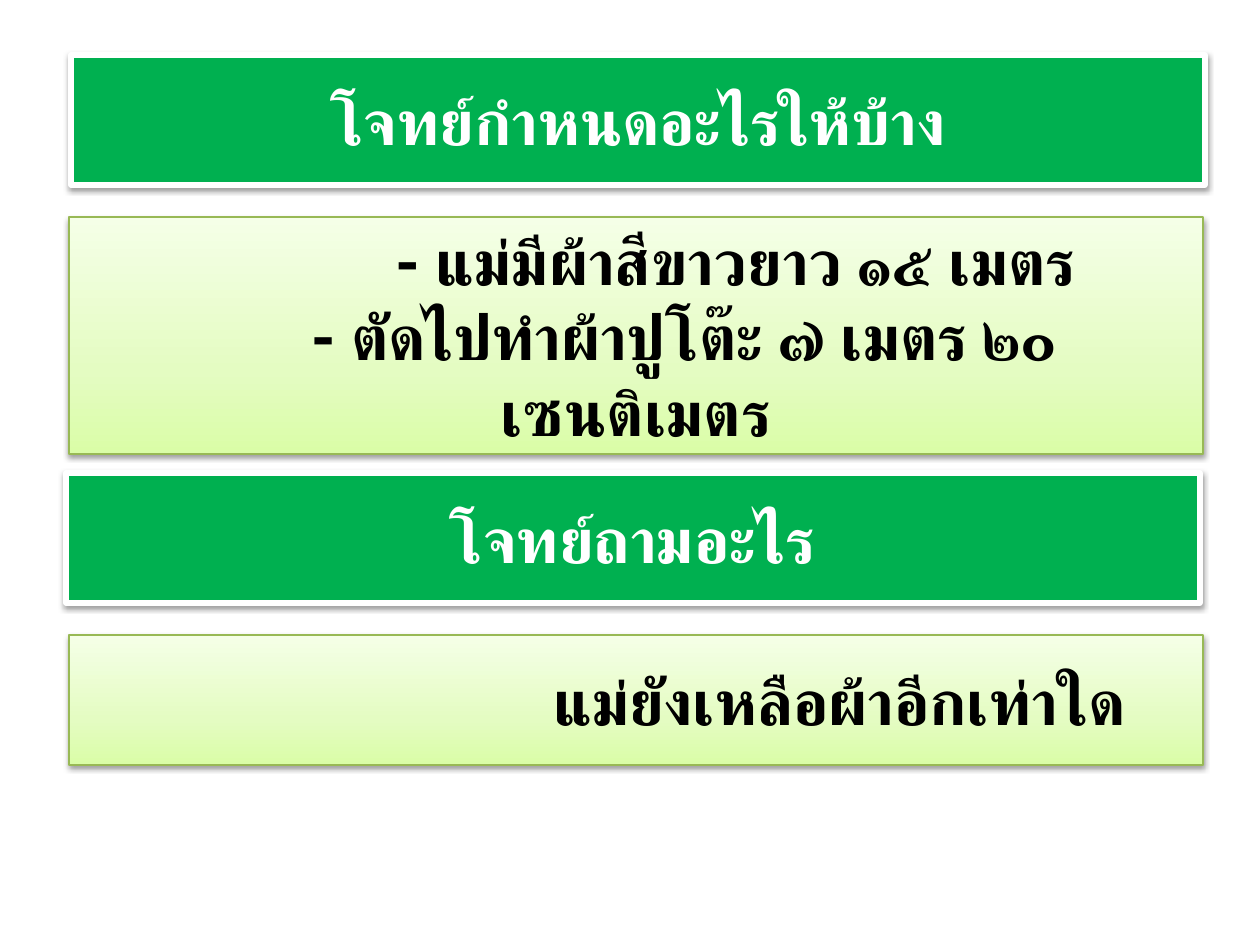
from copy import deepcopy
from dataclasses import dataclass

from lxml.etree import SubElement
from pptx import Presentation
from pptx.dml.color import RGBColor
from pptx.enum.shapes import MSO_SHAPE
from pptx.enum.text import MSO_ANCHOR, PP_ALIGN
from pptx.oxml.ns import qn
from pptx.util import Pt

PX = 914400 // 126
WIDE = 1134
GREEN = RGBColor(0x00, 0xB0, 0x50)
OLIVE = RGBColor(0x98, 0xB9, 0x55)
WHITE = RGBColor(0xFF, 0xFF, 0xFF)
BLACK = RGBColor(0x00, 0x00, 0x00)
FADE = (
    (0, RGBColor(0xDA, 0xFD, 0xA7)),
    (0.35, RGBColor(0xE4, 0xFC, 0xC2)),
    (1, RGBColor(0xF5, 0xFF, 0xE7)),
)
FONT = {"name": "Roboto", "size": Pt(36), "bold": True}


@dataclass(frozen=True)
class Line:
    text: str
    align: PP_ALIGN = PP_ALIGN.CENTER
    margin: int = 0
    first: int = 0


@dataclass(frozen=True)
class Panel:
    left: int
    top: int
    high: int
    head: bool
    lines: tuple[Line, ...]


PANELS = (
    Panel(71, 55, 130, True, (Line("โจทย์กำหนดอะไรให้บ้าง"),)),
    Panel(69, 217, 237, False, (
        Line("- แม่มีผ้าสีขาวยาว ๑๕ เมตร", PP_ALIGN.LEFT, margin=314),
        Line("- ตัดไปทำผ้าปูโต๊ะ ๗ เมตร ๒๐ เซนติเมตร", first=95),
    )),
    Panel(66, 473, 130, True, (Line("โจทย์ถามอะไร"),)),
    Panel(69, 635, 130, False, (
        Line("แม่ยังเหลือผ้าอีกเท่าใด", PP_ALIGN.LEFT, margin=472),
    )),
)


def fade(shape) -> None:
    """Fill the shape with the three-stop gradient, running upward."""
    fill = shape.fill
    fill.gradient()
    fill.gradient_angle = 90
    stops = shape._element.spPr.find(qn("a:gradFill")).find(qn("a:gsLst"))
    stops.insert(1, deepcopy(stops[0]))
    for stop, (place, color) in zip(fill.gradient_stops, FADE):
        stop.position = place
        stop.color.rgb = color


def shade(shape) -> None:
    """Give the shape a soft shadow straight below it."""
    shape.shadow.inherit = False
    effects = shape._element.spPr.find(qn("a:effectLst"))
    outer = SubElement(effects, qn("a:outerShdw"), blurRad="40000",
                       dist="20000", dir="5400000", rotWithShape="0")
    color = SubElement(outer, qn("a:srgbClr"), val="000000")
    SubElement(color, qn("a:alpha"), val="38000")


def write(para, line: Line, color: RGBColor) -> None:
    para.alignment = line.align
    props = para._p.get_or_add_pPr()
    props.set("marL", str(line.margin * PX))
    props.set("indent", str(line.first * PX))
    run = para.add_run()
    run.text = line.text
    for key, value in FONT.items():
        setattr(run.font, key, value)
    run.font.color.rgb = color
    SubElement(run._r.get_or_add_rPr(), qn("a:cs"), typeface=FONT["name"])


def draw(slide, panel: Panel) -> None:
    shape = slide.shapes.add_shape(
        MSO_SHAPE.RECTANGLE,
        *(n * PX for n in (panel.left, panel.top, WIDE, panel.high)))
    if panel.head:
        shape.fill.solid()
        shape.fill.fore_color.rgb = GREEN
    else:
        fade(shape)
    shape.line.color.rgb = WHITE if panel.head else OLIVE
    shape.line.width = Pt(3 if panel.head else 0.75)
    shade(shape)
    frame = shape.text_frame
    frame.word_wrap = True
    frame.vertical_anchor = MSO_ANCHOR.MIDDLE
    for i, line in enumerate(panel.lines):
        para = frame.add_paragraph() if i else frame.paragraphs[0]
        write(para, line, WHITE if panel.head else BLACK)


def main() -> None:
    deck = Presentation()
    deck.slide_width, deck.slide_height = 1260 * PX, 945 * PX
    slide = deck.slides.add_slide(deck.slide_layouts[6])
    for panel in PANELS:
        draw(slide, panel)
    deck.save("out.pptx")


if __name__ == "__main__":
    main()
